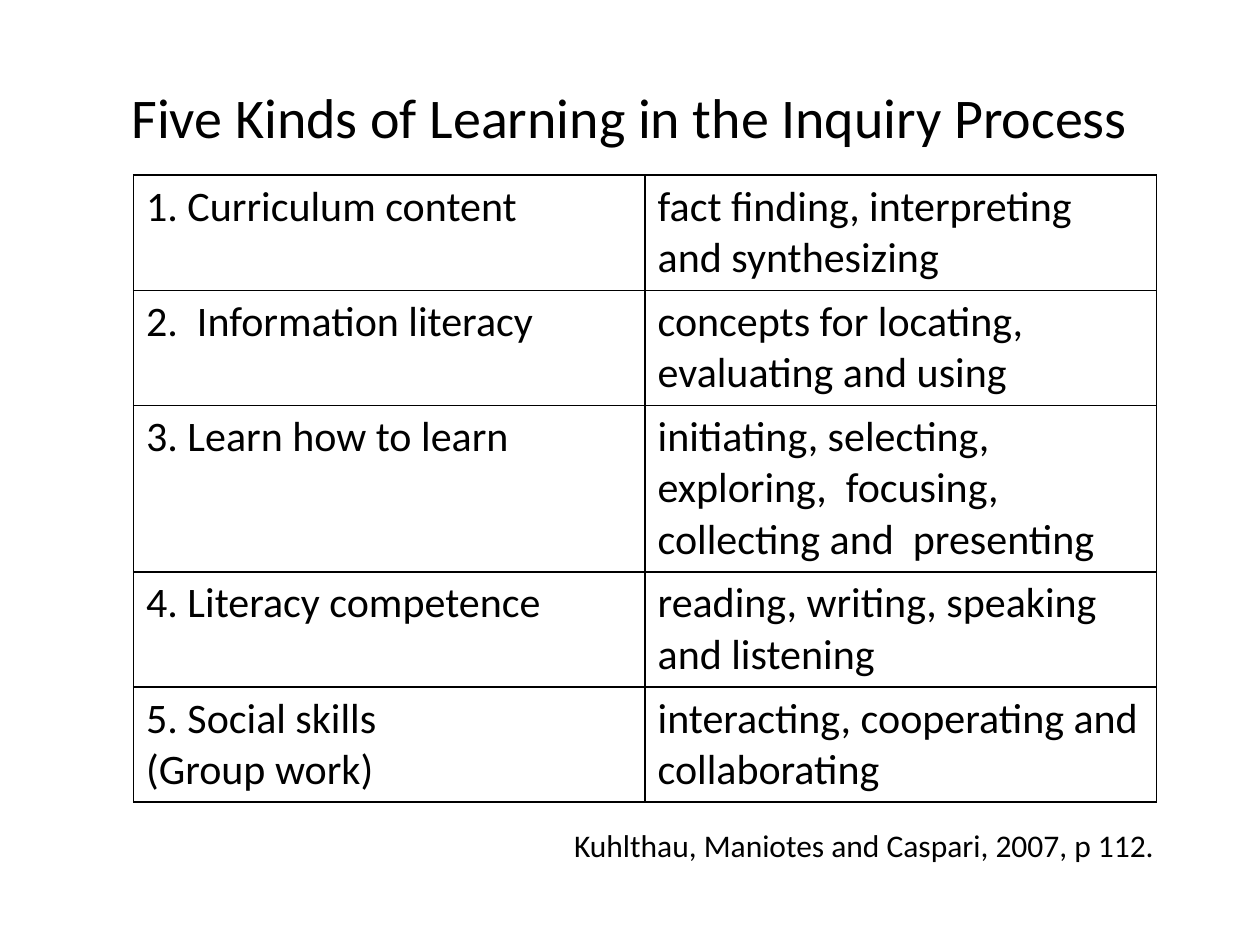
from pptx import Presentation
from pptx.dml.color import RGBColor
from pptx.enum.text import MSO_ANCHOR, PP_ALIGN
from pptx.oxml import parse_xml
from pptx.oxml.ns import nsdecls
from pptx.util import Inches, Pt

COLORS = {"text": "000000", "border": "000000"}
ROWS = [
    ("1. Curriculum content", "fact finding, interpreting and synthesizing"),
    ("2.  Information literacy", "concepts for locating, evaluating and using"),
    ("3. Learn how to learn",
     "initiating, selecting, exploring,  focusing, collecting and  presenting"),
    ("4. Literacy competence", "reading, writing, speaking and listening"),
    ("5. Social skills\n(Group work)", "interacting, cooperating and collaborating"),
]


def format_text(tf, size, align):
    for p in tf.paragraphs:
        p.alignment = align
        for r in p.runs:
            r.font.name = "Calibri"
            r.font.size = Pt(size)
            r.font.bold = False
            r.font.color.rgb = RGBColor.from_string(COLORS["text"])


def add_borders(cell):
    tc_pr = cell._tc.get_or_add_tcPr()
    for i, side in enumerate(("lnL", "lnR", "lnT", "lnB")):
        tc_pr.insert(i, parse_xml(
            f'<a:{side} {nsdecls("a")} w="{Pt(1)}"><a:solidFill>'
            f'<a:srgbClr val="{COLORS["border"]}"/></a:solidFill></a:{side}>'))


prs = Presentation()
prs.slide_width, prs.slide_height = Inches(10), Inches(7.5)
s = prs.slides.add_slide(prs.slide_layouts[5])

title = s.shapes.title
title.left, title.top = Inches(0.5), Inches(0.3)
title.width, title.height = Inches(9), Inches(1.25)
title.text_frame.text = "Five Kinds of Learning in the Inquiry Process"
title.text_frame.vertical_anchor = MSO_ANCHOR.MIDDLE
format_text(title.text_frame, 32, PP_ALIGN.CENTER)

table = s.shapes.add_table(len(ROWS), 2, Inches(1.06), Inches(1.39),
                           Inches(8.12), Inches(0.85 * len(ROWS))).table
table.first_row = False
table.horz_banding = False
for i, row in enumerate(ROWS):
    for j, text in enumerate(row):
        cell = table.cell(i, j)
        cell.text_frame.text = text
        cell.fill.background()
        format_text(cell.text_frame, 24, PP_ALIGN.LEFT)
        add_borders(cell)

source = s.shapes.add_textbox(Inches(0.91), Inches(6.51), Inches(8.35), Inches(0.4))
tf = source.text_frame
tf.word_wrap = True
tf.text = "Kuhlthau, Maniotes and Caspari, 2007, p 112."
format_text(tf, 18, PP_ALIGN.RIGHT)

prs.save("out.pptx")
